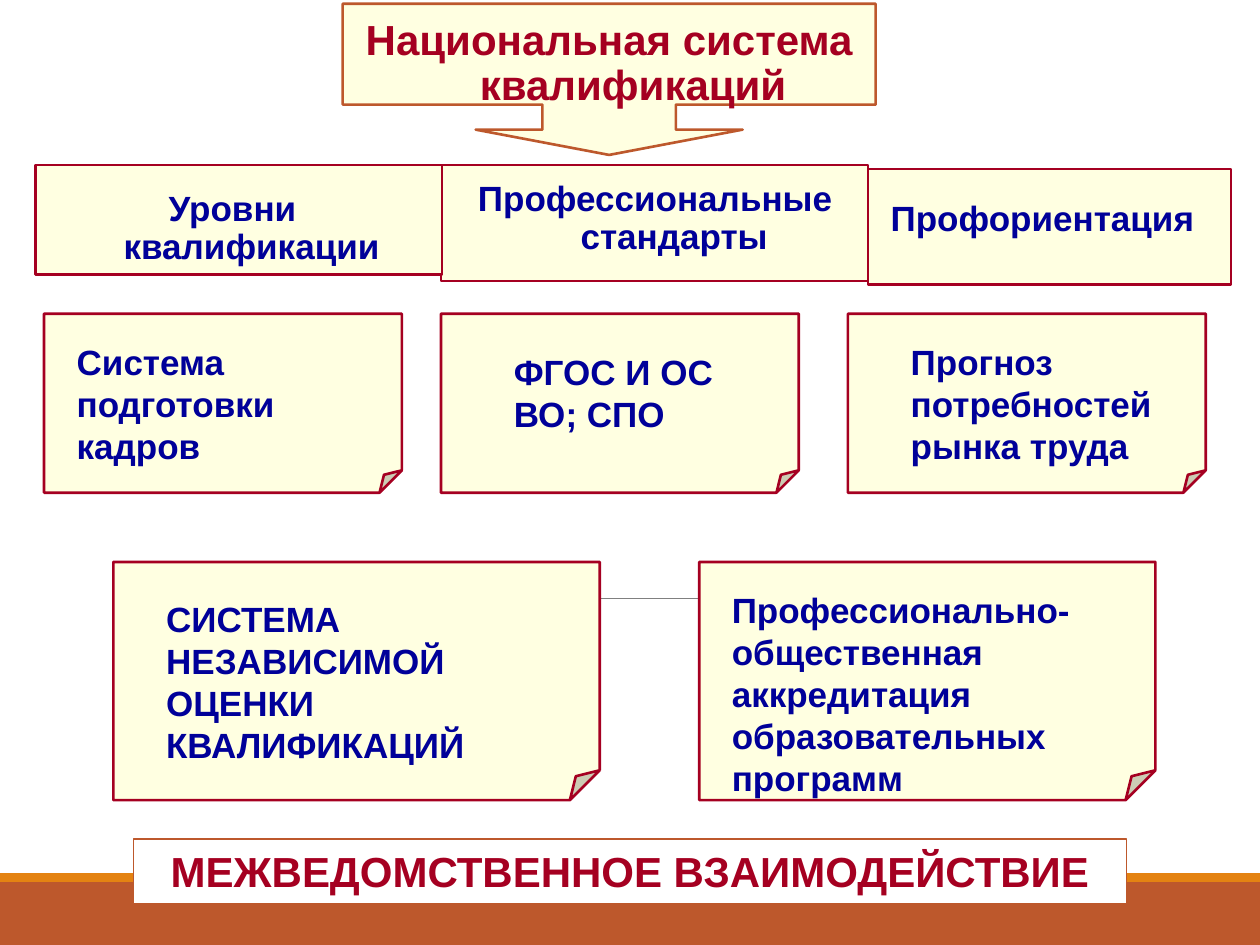
from lxml.etree import SubElement
from pptx import Presentation
from pptx.dml.color import RGBColor
from pptx.enum.shapes import MSO_CONNECTOR, MSO_SHAPE
from pptx.enum.text import MSO_ANCHOR, MSO_AUTO_SIZE, PP_ALIGN
from pptx.oxml.ns import qn
from pptx.util import Inches, Pt

CREAM, CRIMSON, NAVY, RUST = "FFFFE1", "A50021", "000099", "BD582C"


def color(value):
    return RGBColor.from_string(value)


def apply(target, values):
    for name, value in values.items():
        setattr(target, name, value)


def set_guides(panel, guides):
    geometry = panel._element.spPr.find(qn("a:prstGeom"))
    for old in geometry.findall(qn("a:avLst")):
        geometry.remove(old)
    adjustments = SubElement(geometry, qn("a:avLst"))
    for name, value in guides.items():
        SubElement(adjustments, qn("a:gd"), name=name, fmla=f"val {round(value * 100000)}")


def add_panel(page, kind, box, fill, line=None, width=1.5, guides=None):
    panel = page.shapes.add_shape(kind, *map(Inches, box))
    panel.shadow.inherit = False
    panel.fill.solid()
    panel.fill.fore_color.rgb = color(fill)
    if line:
        panel.line.color.rgb = color(line)
        panel.line.width = Pt(width)
    else:
        panel.line.fill.background()
    if guides:
        set_guides(panel, guides)
    return panel


def write(shape, text, size=20, ink=NAVY, align=PP_ALIGN.LEFT, hanging=False):
    frame = shape.text_frame
    apply(frame, {"word_wrap": True, "vertical_anchor": MSO_ANCHOR.TOP,
                  "auto_size": MSO_AUTO_SIZE.SHAPE_TO_FIT_TEXT})
    para = frame.paragraphs[0]
    para.alignment = align
    if hanging:
        para.line_spacing = 0.9
        properties = para._p.get_or_add_pPr()
        properties.set("marL", str(Inches(0.38)))
        properties.set("indent", str(Inches(-0.38)))
    span = para.add_run()
    span.text = text
    apply(span.font, {"name": "Arial", "size": Pt(size), "bold": True})
    span.font.color.rgb = color(ink)


def add_label(page, box, text, **style):
    write(page.shapes.add_textbox(*map(Inches, box)), text, **style)


def add_backdrop(page):
    add_panel(page, MSO_SHAPE.RECTANGLE, (0, 7, 10, 0.5), RUST)
    add_panel(page, MSO_SHAPE.RECTANGLE, (0, 6.93, 10, 0.07), "E48312")
    rule = page.shapes.add_connector(
        MSO_CONNECTOR.STRAIGHT, *map(Inches, (0.99, 4.75, 9.09, 4.75)))
    rule.line.color.rgb = color("808080")
    rule.line.width = Pt(0.5)
    SubElement(rule._element.spPr, qn("a:effectLst"))


def add_heading(page, box, label_box, text):
    add_panel(page, MSO_SHAPE.DOWN_ARROW_CALLOUT, box, CREAM, RUST,
              guides={"adj1": 0.883, "adj2": 0.883, "adj3": 0.167, "adj4": 0.667})
    add_label(page, label_box, text, size=24, ink=CRIMSON,
              align=PP_ALIGN.CENTER, hanging=True)


def add_pillar(page, box, label_box, text, **style):
    add_panel(page, MSO_SHAPE.RECTANGLE, box, CREAM, CRIMSON)
    add_label(page, label_box, text, **style)


def add_note(page, box, label_box, text):
    add_panel(page, MSO_SHAPE.FOLDED_CORNER, box, CREAM, CRIMSON, guides={"adj": 0.125})
    add_label(page, label_box, text)


def add_footer(page, box, text):
    banner = add_panel(page, MSO_SHAPE.RECTANGLE, box, "FFFFFF", RUST, 0.75)
    write(banner, text, size=24, ink=CRIMSON, align=PP_ALIGN.CENTER)


def main():
    deck = Presentation()
    apply(deck, {"slide_width": Inches(10), "slide_height": Inches(7.5)})
    page = deck.slides.add_slide(deck.slide_layouts[6])
    centered = {"align": PP_ALIGN.CENTER, "hanging": True}
    pillars = [
        ((6.89, 1.34, 2.88, 0.92), (6.97, 1.51, 2.84, 0.43), "Профориентация", {}),
        ((3.5, 1.31, 3.39, 0.92), (3.35, 1.39, 3.7, 0.7),
         "Профессиональные стандарты ", centered),
        ((0.28, 1.31, 3.23, 0.87), (0.27, 1.47, 3.15, 0.7),
         "Уровни квалификации ", centered),
    ]
    notes = [
        ((0.35, 2.49, 2.84, 1.42), (0.51, 2.65, 2.28, 1.1), "Система подготовки кадров"),
        ((3.5, 2.49, 2.84, 1.42), (3.98, 2.73, 2.13, 0.77), "ФГОС И ОС ВО; СПО"),
        ((6.73, 2.49, 2.84, 1.42), (7.13, 2.65, 2.13, 1.1),
         "Прогноз потребностей рынка труда"),
        ((0.9, 4.46, 3.86, 1.89), (1.22, 4.69, 3.23, 1.43),
         "СИСТЕМА НЕЗАВИСИМОЙ ОЦЕНКИ КВАЛИФИКАЦИЙ"),
        ((5.55, 4.46, 3.62, 1.89), (5.71, 4.62, 3.47, 1.77),
         "Профессионально-общественная аккредитация образовательных программ"),
    ]
    add_backdrop(page)
    for box, label_box, text, style in pillars:
        add_pillar(page, box, label_box, text, **style)
    add_heading(page, (2.72, 0.03, 4.23, 1.2), (2.56, 0.1, 4.55, 0.82),
                "Национальная система квалификаций")
    for box, label_box, text in notes:
        add_note(page, box, label_box, text)
    add_footer(page, (1.06, 6.66, 7.88, 0.51), "МЕЖВЕДОМСТВЕННОЕ ВЗАИМОДЕЙСТВИЕ")
    deck.save("out.pptx")


if __name__ == "__main__":
    main()
